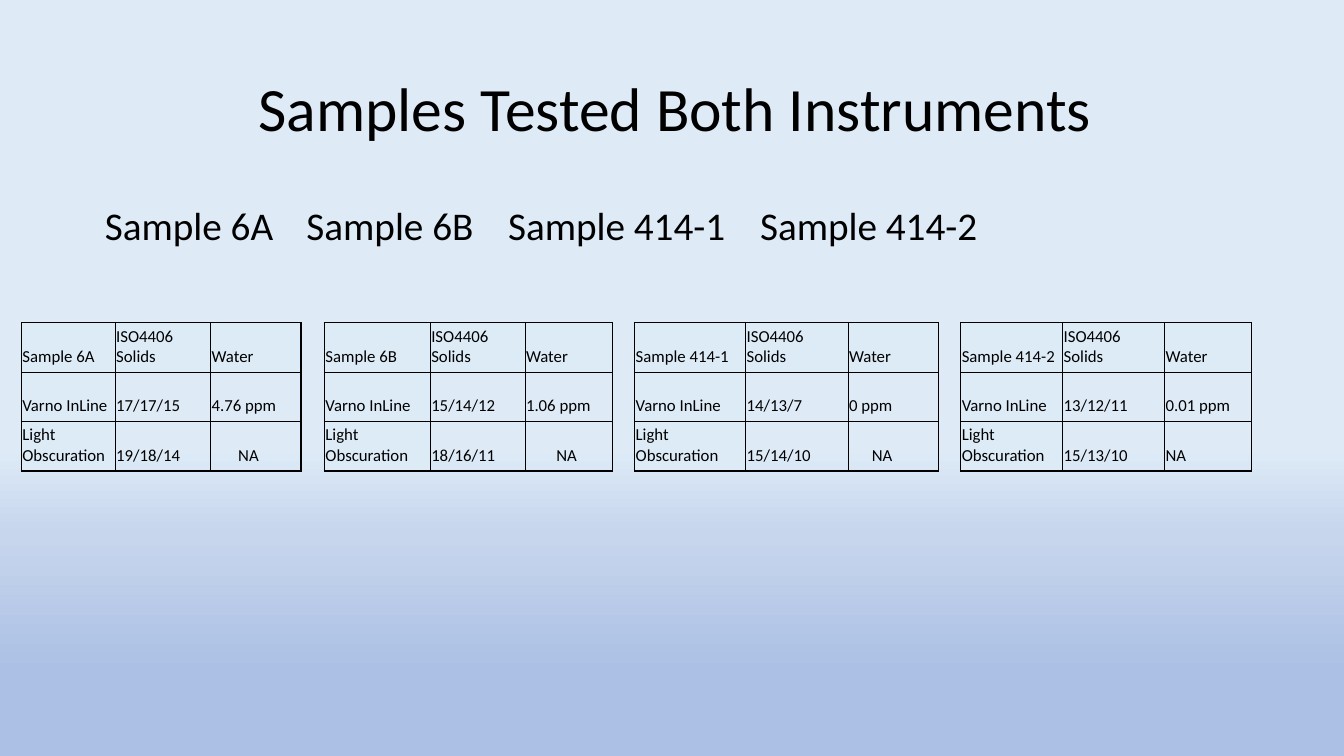
from copy import deepcopy
from dataclasses import dataclass

from pptx import Presentation
from pptx.dml.color import RGBColor as RGB
from pptx.enum.text import MSO_ANCHOR as Anchor, PP_ALIGN as Align
from pptx.oxml.ns import qn
from pptx.oxml.xmlchemy import OxmlElement as Element
from pptx.util import Pt


@dataclass(frozen=True)
class Theme:
    font: str = "Calibri"
    ink: str = "000000"
    label_fill: str = "DDEBF7"
    title_size: int = 44
    heading_size: int = 28
    cell_size: int = 12
    outer_line: float = 1
    inner_line: float = 0.5
    gradient: tuple = ((0.59, "DEEBF7"), (0.71, "C7D5ED"),
                       (0.89, "ABC0E4"), (0.93, "ABC0E4"))


THEME = Theme()
TABLE_TOP, ROW_HEIGHT = 230.4, 35.35
HEADING_STOPS = (18, 219, 432, 666)


@dataclass(frozen=True)
class Sample:
    name: str
    left: float
    widths: tuple
    inline_solids: str
    inline_water: str
    light_solids: str
    na_indent: float

    def rows(self):
        return (
            (self.name, "ISO4406 Solids", "Water"),
            ("Varno InLine", self.inline_solids, self.inline_water),
            ("Light Obscuration", self.light_solids, "NA"),
        )


SAMPLES = (
    Sample("Sample 6A", 15.3, (67, 68.2, 64.6), "17/17/15", "4.76 ppm", "19/18/14", 19),
    Sample("Sample 6B", 231.8, (75.6, 67.7, 62.6), "15/14/12", "1.06 ppm", "18/16/11", 21.7),
    Sample("Sample 414-1", 453.4, (79.2, 73.2, 64.6), "14/13/7", "0 ppm", "15/14/10", 16.3),
    Sample("Sample 414-2", 686.3, (72.8, 72.8, 61.8), "13/12/11", "0.01 ppm", "15/13/10", 0),
)


def style_text(paragraph, size):
    for run in paragraph.runs:
        run.font.name = THEME.font
        run.font.size = Pt(size)
        run.font.color.rgb = RGB.from_string(THEME.ink)


def place(placeholder, left, top, width, height):
    placeholder.left, placeholder.top = Pt(left), Pt(top)
    placeholder.width, placeholder.height = Pt(width), Pt(height)


def paint_background(slide):
    fill = slide.background.fill
    fill.gradient()
    fill.gradient_angle = 270  # top to bottom
    stop_list = slide.element.find(".//" + qn("a:gsLst"))
    while len(stop_list) < len(THEME.gradient):
        stop_list.append(deepcopy(stop_list[0]))
    for stop, (position, colour) in zip(fill.gradient_stops, THEME.gradient):
        stop.color.rgb = RGB.from_string(colour)
        stop.position = position


def add_title(slide, text):
    title = slide.shapes.title
    place(title, 68.4, 27.4, 828, 105)
    title.text_frame.text = text
    title.text_frame.vertical_anchor = Anchor.MIDDLE
    heading = title.text_frame.paragraphs[0]
    heading.alignment = Align.CENTER
    heading.line_spacing = 0.9
    style_text(heading, THEME.title_size)


def add_sample_headings(slide):
    body = slide.placeholders[1]
    place(body, 31.7, 144, 901.4, 342.7)
    body.text_frame.text = "".join("\t" + sample.name for sample in SAMPLES)
    headings = body.text_frame.paragraphs[0]
    headings.line_spacing = 0.9
    headings.space_before = Pt(0)

    # One tab stop per heading, no bullet
    properties = headings._p.get_or_add_pPr()
    properties.set("marL", "0")
    properties.set("indent", "0")
    properties.append(Element("a:buNone"))
    stops = Element("a:tabLst")
    for position in HEADING_STOPS:
        stop = Element("a:tab")
        stop.set("pos", str(Pt(position)))
        stop.set("algn", "l")
        stops.append(stop)
    properties.append(stops)
    style_text(headings, THEME.heading_size)


def add_border(cell, side, width):
    line = Element("a:ln" + side)
    line.set("w", str(Pt(width)))
    solid, colour = Element("a:solidFill"), Element("a:srgbClr")
    colour.set("val", THEME.ink)
    solid.append(colour)
    line.append(solid)
    cell._tc.get_or_add_tcPr().append(line)


def format_cell(cell, row, column, last_row, last_column):
    cell.vertical_anchor = Anchor.BOTTOM
    cell.margin_left = cell.margin_right = cell.margin_top = Pt(0.7)
    cell.margin_bottom = Pt(3.6)

    # Thicker lines around the outside of the table
    outside = {"L": column == 0, "R": column == last_column,
               "T": row == 0, "B": row == last_row}
    for side, is_outer in outside.items():
        add_border(cell, side, THEME.outer_line if is_outer else THEME.inner_line)

    # Only the label row and label column are filled
    if row == 0 or column == 0:
        cell.fill.solid()
        cell.fill.fore_color.rgb = RGB.from_string(THEME.label_fill)
    else:
        cell.fill.background()


def add_sample_table(slide, sample):
    rows = sample.rows()
    frame = slide.shapes.add_table(
        len(rows), len(sample.widths), Pt(sample.left), Pt(TABLE_TOP),
        Pt(sum(sample.widths)), Pt(ROW_HEIGHT * len(rows)))
    table = frame.table
    table.first_row = table.horz_banding = False
    for column, width in zip(table.columns, sample.widths):
        column.width = Pt(width)
    for r, values in enumerate(rows):
        table.rows[r].height = Pt(ROW_HEIGHT)
        for c, value in enumerate(values):
            cell = table.cell(r, c)
            cell.text_frame.text = value
            entry = cell.text_frame.paragraphs[0]
            if value == "NA":
                entry._p.get_or_add_pPr().set("marL", str(Pt(sample.na_indent)))
            style_text(entry, THEME.cell_size)
            format_cell(cell, r, c, len(rows) - 1, len(values) - 1)


def main():
    deck = Presentation()
    deck.slide_width, deck.slide_height = Pt(960), Pt(540)
    slide = deck.slides.add_slide(deck.slide_layouts[1])
    paint_background(slide)
    add_title(slide, "Samples Tested Both Instruments")
    add_sample_headings(slide)
    for sample in SAMPLES:
        add_sample_table(slide, sample)
    deck.save("out.pptx")


if __name__ == "__main__":
    main()
